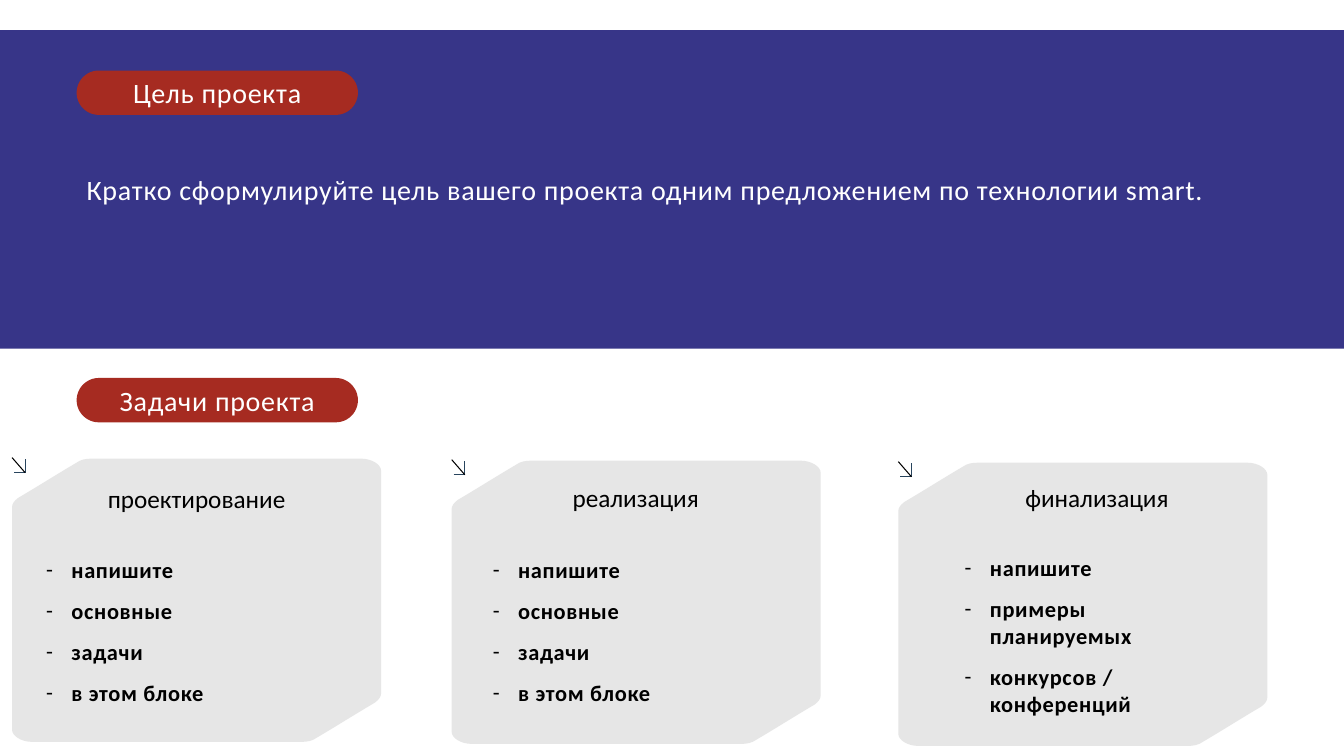
from lxml.etree import SubElement
from pptx import Presentation
from pptx.dml.color import RGBColor
from pptx.enum.shapes import MSO_CONNECTOR, MSO_SHAPE
from pptx.enum.text import MSO_ANCHOR, MSO_AUTO_SIZE, PP_ALIGN
from pptx.oxml.ns import qn
from pptx.util import Inches, Pt

FONT = "Calibri"
CARD_W, CARD_H = 3.66, 2.81
BLUE, RED, GREY = "373588", "A62B21", "E6E6E6"
WHITE, BLACK, STEEL = "FFFFFF", "000000", "28445D"

# Right and bottom edges of a card: one point for a line, three for a curve.
# The other half is the same turned by 180 degrees.
HALF_CARD = [
    [(3.66, 2.33)],
    [(3.66, 2.36), (3.64, 2.39), (3.6, 2.42)],
    [(3.38, 2.55), (3.24, 2.64), (3.02, 2.77)],
    [(2.98, 2.8), (2.93, 2.81), (2.87, 2.81)],
    [(0.2, 2.81)],
    [(0.09, 2.81), (0, 2.75), (0, 2.69)],
]

TASKS = ["напишите", "основные", "задачи", "в этом блоке"]
CONTESTS = ["напишите", "примеры планируемых", "конкурсов / конференций"]

# Card corner, title, title box, tasks, task box
STAGES = [
    ((0.12, 4.55), "проектирование", (0.61, 4.75, 2.68, 0.4), TASKS, (0.36, 5.47, 1.79, 1.58)),
    ((4.48, 4.57), "реализация", (5.1, 4.74, 2.41, 0.4), TASKS, (4.79, 5.47, 1.79, 1.58)),
    ((8.91, 4.59), "финализация", (9.63, 4.74, 2.5, 0.4), CONTESTS, (9.47, 5.45, 2.57, 1.58)),
]


def rgb(color):
    return RGBColor.from_string(color)


def inches(values):
    return [Inches(v) for v in values]


def format_text(p, size, color, bold=False, spacing=0):
    """Format the runs of a paragraph; spacing is between letters, in points."""
    for r in p.runs:
        r.font.name = FONT
        r.font.size = Pt(size)
        r.font.bold = bold
        r.font.color.rgb = rgb(color)
        if spacing:
            r.font._element.set("spc", str(round(spacing * 100)))


def add_round_rect(slide, box, radius, color):
    sp = slide.shapes.add_shape(MSO_SHAPE.ROUNDED_RECTANGLE, *inches(box))
    sp.adjustments[0] = radius
    sp.shadow.inherit = False
    sp.fill.solid()
    sp.fill.fore_color.rgb = rgb(color)
    sp.line.fill.background()
    return sp


def add_pill(slide, top, text):
    sp = add_round_rect(slide, (0.76, top, 2.79, 0.44), 0.5, RED)
    tf = sp.text_frame
    tf.text = text
    tf.vertical_anchor = MSO_ANCHOR.MIDDLE
    tf.paragraphs[0].alignment = PP_ALIGN.CENTER
    format_text(tf.paragraphs[0], 20, WHITE, spacing=0.5)


def add_text(slide, box, text):
    """Add a wrapped text box and return its text frame."""
    tf = slide.shapes.add_textbox(*inches(box)).text_frame
    tf.word_wrap = True
    tf.text = text
    return tf


def add_line_text(slide, box, text, size, color, align, spacing=0):
    tf = add_text(slide, box, text)
    tf.auto_size = MSO_AUTO_SIZE.SHAPE_TO_FIT_TEXT
    tf.paragraphs[0].alignment = align
    format_text(tf.paragraphs[0], size, color, spacing=spacing)


def add_task_list(slide, box, tasks):
    tf = add_text(slide, box, "\n".join(tasks))
    for p in tf.paragraphs:
        p.space_before = Pt(10)
        format_text(p, 16, BLACK, bold=True, spacing=0.5)
        pPr = p._p.get_or_add_pPr()
        pPr.set("marL", str(Inches(0.25)))
        pPr.set("indent", str(Inches(-0.25)))
        SubElement(pPr, qn("a:buFont"), typeface=FONT)
        SubElement(pPr, qn("a:buChar"), char="-")


def add_outline(shapes, points, close):
    start, *rest = [inches(point) for point in points]
    builder = shapes.build_freeform(*start, scale=1.0)
    builder.add_line_segments(rest, close=close)
    sp = builder.convert_to_shape()
    sp.shadow.inherit = False
    return sp


def bend_lines(sp, segments):
    """Merge the straight lines of each three-point segment into one curve."""
    lines = sp._element.iter(qn("a:lnTo"))
    lines = iter(list(lines))
    for segment in segments:
        first, *others = [next(lines) for _ in segment]
        if others:
            first.tag = qn("a:cubicBezTo")
            for line in others:
                first.append(line[0])
                line.getparent().remove(line)


def add_card(slide, x, y):
    turned = [[(CARD_W - px, CARD_H - py) for px, py in segment] for segment in HALF_CARD]
    segments = HALF_CARD + turned
    points = [(x + px, y + py) for segment in segments for px, py in segment]
    sp = add_outline(slide.shapes, points[-1:] + points, True)
    bend_lines(sp, segments)
    sp.fill.solid()
    sp.fill.fore_color.rgb = rgb(GREY)
    sp.line.fill.background()


def add_corner_arrow(slide, x, y):
    shapes = slide.shapes.add_group_shape().shapes
    tip = (x + 0.13, y + 0.14)
    head = add_outline(shapes, [(x + 0.02, tip[1]), tip, (tip[0], y)], False)
    head.fill.background()
    shaft = shapes.add_connector(MSO_CONNECTOR.STRAIGHT, *inches((x, y - 0.01, *tip)))
    SubElement(shaft._element.spPr, qn("a:effectLst"))
    for sp, color in ((head, STEEL), (shaft, BLACK)):
        sp.line.color.rgb = rgb(color)
        sp.line.width = Pt(0.75)


def main():
    prs = Presentation()
    prs.slide_width, prs.slide_height = Inches(13.33), Inches(7.5)
    s = prs.slides.add_slide(prs.slide_layouts[6])

    add_round_rect(s, (-1.1, 0.3, 15.52, 3.16), 0.092, BLUE)
    add_line_text(
        s, (0.76, 1.66, 11.81, 0.44),
        "Кратко сформулируйте цель вашего проекта одним предложением по технологии smart.",
        20, WHITE, PP_ALIGN.LEFT, 0.5)
    add_pill(s, 0.7, "Цель проекта")
    add_pill(s, 3.75, "Задачи проекта")

    for corner, *_ in STAGES:
        add_corner_arrow(s, *corner)
        add_card(s, *corner)
    for _, title, title_box, _, _ in STAGES:
        add_line_text(s, title_box, title, 18, BLACK, PP_ALIGN.CENTER)
    for *_, tasks, task_box in STAGES:
        add_task_list(s, task_box, tasks)

    prs.save("out.pptx")


if __name__ == "__main__":
    main()
